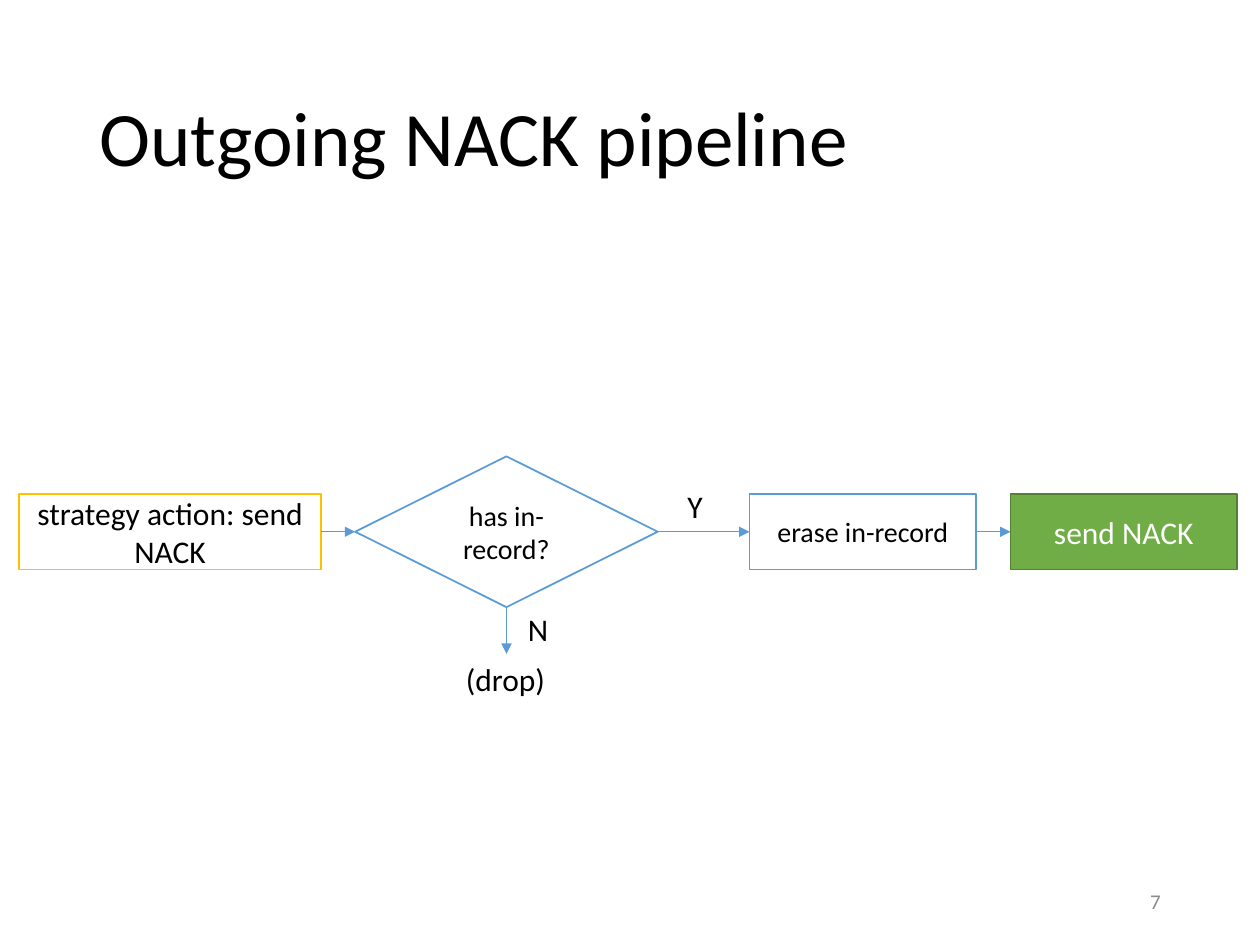
"""Build the outgoing NACK pipeline flowchart slide."""
from dataclasses import dataclass

from lxml import etree
from pptx import Presentation
from pptx.dml.color import RGBColor as RGB
from pptx.enum.shapes import MSO_CONNECTOR as CONN, MSO_SHAPE as SHAPE
from pptx.enum.text import MSO_ANCHOR as ANCHOR, MSO_AUTO_SIZE as AUTO, PP_ALIGN as ALIGN
from pptx.oxml.ns import qn
from pptx.util import Cm, Pt


@dataclass(frozen=True)
class Theme:
    font: str = "Calibri"
    black: str = "000000"
    white: str = "FFFFFF"
    gray: str = "8C8C8C"
    blue: str = "5B9BD5"
    gold: str = "FFC000"
    green: str = "70AD47"
    dark_green: str = "538035"
    title: int = 44
    body: int = 18
    small: int = 16
    number: int = 12


T = Theme()


def write(tf, text, size, color, align, anchor=ANCHOR.MIDDLE):
    tf.vertical_anchor = anchor
    p = tf.paragraphs[0]
    p.alignment = align
    r = p.add_run()
    r.text = text
    r.font.name, r.font.size = T.font, Pt(size)
    r.font.color.rgb = RGB.from_string(color)
    return p


prs = Presentation()
prs.slide_width, prs.slide_height = Cm(25.4), Cm(19.05)
s = prs.slides.add_slide(prs.slide_layouts[5])

title = s.shapes.title
title.left, title.top, title.width, title.height = Cm(1.75), Cm(1.01), Cm(21.9), Cm(3.68)
title.text_frame.word_wrap = True
title.text_frame.auto_size = AUTO.NONE
p = write(title.text_frame, "Outgoing NACK pipeline", T.title, T.black, ALIGN.LEFT)
p.line_spacing = 0.9

axis = 10.72
steps = [
    (SHAPE.RECTANGLE, "strategy action: send NACK", 0.38, 6.1, 1.52, T.white, T.gold, T.black, T.body),
    (SHAPE.FLOWCHART_DECISION, "has in-record?", 7.16, 6.1, 3.04, T.white, T.blue, T.black, T.small),
    (SHAPE.RECTANGLE, "erase in-record", 15.11, 4.57, 1.52, T.white, T.blue, T.black, T.small),
    (SHAPE.RECTANGLE, "send NACK", 20.37, 4.57, 1.52, T.green, T.dark_green, T.white, T.body),
]
nodes = []
for kind, text, left, width, height, fill, line, color, size in steps:
    sp = s.shapes.add_shape(kind, Cm(left), Cm(axis - height / 2), Cm(width), Cm(height))
    sp.shadow.inherit = False
    sp.fill.solid()
    sp.fill.fore_color.rgb = RGB.from_string(fill)
    sp.line.color.rgb = RGB.from_string(line)
    sp.line.width = Pt(1)
    sp.text_frame.word_wrap = True
    write(sp.text_frame, text, size, color, ALIGN.CENTER)
    nodes.append(sp)

labels = {}
for text, left, top, width in [("(drop)", 9.14, 13.18, 2.14), ("N", 10.39, 12.17, 0.91), ("Y", 13.61, 9.7, 0.81)]:
    sp = s.shapes.add_textbox(Cm(left), Cm(top), Cm(width), Cm(1.02))
    sp.text_frame.word_wrap = False
    sp.text_frame.auto_size = AUTO.SHAPE_TO_FIT_TEXT
    write(sp.text_frame, text, T.body, T.black, ALIGN.LEFT, ANCHOR.TOP)
    labels[text] = sp

links = [(a, 3, b, 1) for a, b in zip(nodes, nodes[1:])]
links.append((nodes[1], 2, labels["(drop)"], 0))
for start, start_site, end, end_site in links:
    c = s.shapes.add_connector(CONN.STRAIGHT, 0, 0, 0, 0)
    c.begin_connect(start, start_site)
    c.end_connect(end, end_site)
    c.line.color.rgb = RGB.from_string(T.blue)
    c.line.width = Pt(0.5)
    etree.SubElement(c.line._get_or_add_ln(), qn("a:tailEnd"), type="triangle")
    etree.SubElement(c._element.spPr, qn("a:effectLst"))

number = s.shapes.add_textbox(Cm(17.93), Cm(17.65), Cm(5.72), Cm(1.02))
number.text_frame.word_wrap = True
write(number.text_frame, "7", T.number, T.gray, ALIGN.RIGHT)

prs.save("out.pptx")
